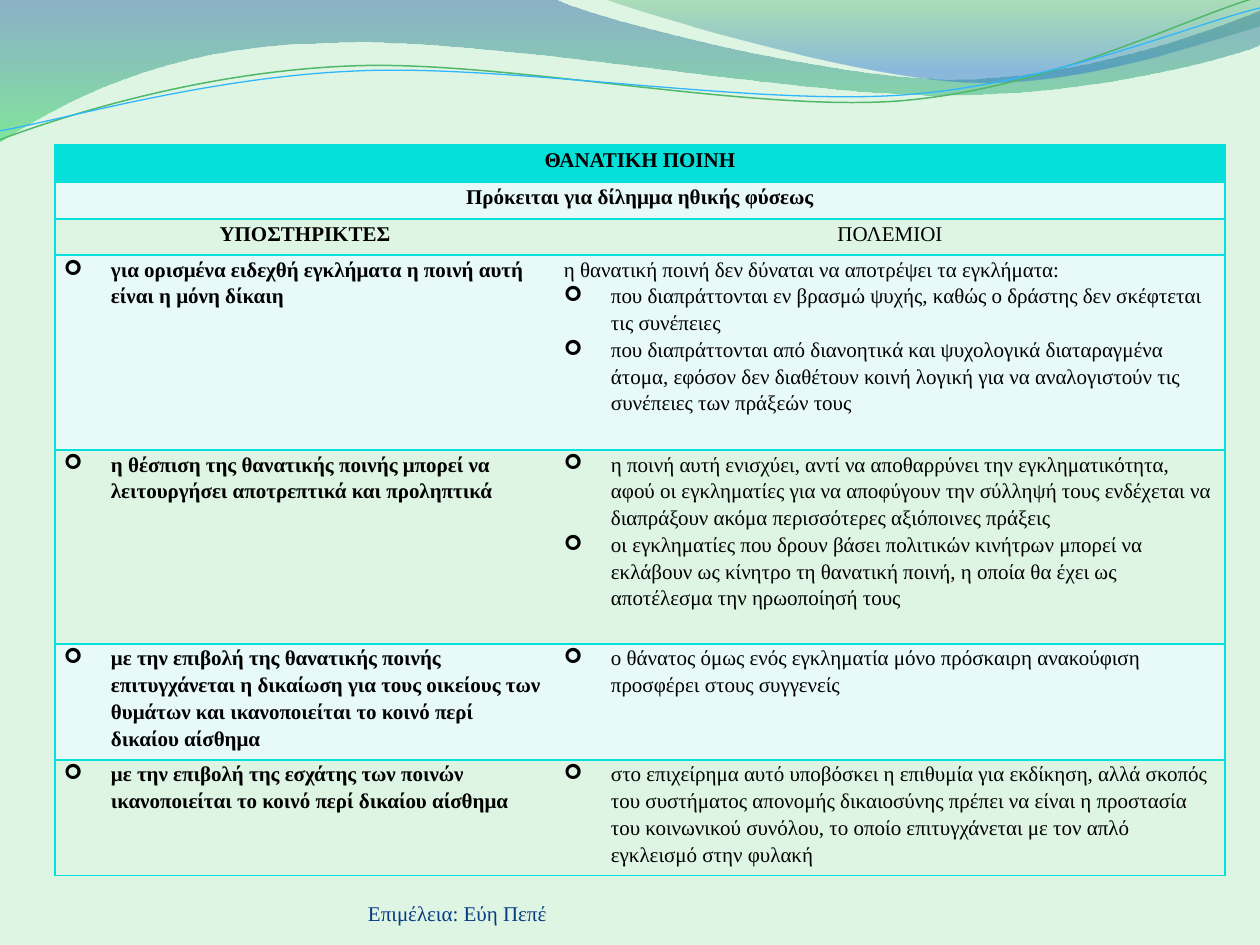
from dataclasses import dataclass

from lxml import etree
from pptx import Presentation
from pptx.dml.color import RGBColor
from pptx.enum.text import MSO_ANCHOR, PP_ALIGN
from pptx.oxml.ns import qn
from pptx.util import Emu, Pt

BOTTOM = MSO_ANCHOR.BOTTOM
CENTER = PP_ALIGN.CENTER
EMU_PER_PX = 914400 / 126


@dataclass(frozen=True)
class Theme:
    """Colours, fonts and sizes of the slide."""
    page: str = "DEF5E4"
    accent: str = "05E0DB"
    band: str = "E7F9F8"
    ink: str = "000000"
    credit: str = "073B81"
    green_line: str = "50B86A"
    blue_line: str = "31B6FD"
    wide_wave: tuple = ((0, "2960A7", 45), (100, "35DA5E", 55))
    right_wave: tuple = ((0, "36A752", 30), (80, "2472D3", 45))
    font: str = "Times New Roman"
    bullet_font: str = "Wingdings"
    size: int = 12
    leading: float = 1.15


THEME = Theme()

WIDE_WAVE = [
    [(0, 0)], [(554, -1)],
    [(600, 21), (837, 79), (955, 79)], [(1074, 79), (1207, 33), (1260, 11)],
    [(1261, 45)],
    [(1239, 55), (1096, 96), (940, 95)], [(784, 95), (481, 35), (324, 43)],
    [(163, 45), (58, 105), (-1, 142)],
]
RIGHT_WAVE = [
    [(604, -1)],
    [(642, 14), (859, 78), (969, 82)], [(1079, 87), (1211, 40), (1260, 26)],
    [(1260, 0)],
]
GREEN_LINE = [
    [(-1, 140)],
    [(60, 117), (199, 72), (349, 66)], [(498, 59), (747, 112), (898, 101)],
    [(1050, 89), (1182, 19), (1258, -3)],
]
BLUE_LINE = [
    [(-1, 131)],
    [(59, 121), (207, 77), (357, 71)], [(508, 64), (752, 106), (903, 95)],
    [(1053, 84), (1186, 26), (1260, 8)],
]

HEADINGS = [["ΘΑΝΑΤΙΚΗ ΠΟΙΝΗ"], ["Πρόκειται για δίλημμα ηθικής φύσεως"], ["ΥΠΟΣΤΗΡΙΚΤΕΣ", "ΠΟΛΕΜΙΟΙ"]]
INTRO = "η θανατική ποινή δεν δύναται να αποτρέψει τα εγκλήματα:"
ARGUMENTS = [
    (["για ορισμένα ειδεχθή εγκλήματα η ποινή αυτή είναι η μόνη δίκαιη"],
     [INTRO,
      "που διαπράττονται εν βρασμώ ψυχής, καθώς ο δράστης δεν σκέφτεται τις συνέπειες",
      "που διαπράττονται από διανοητικά και ψυχολογικά διαταραγμένα άτομα, εφόσον δεν "
      "διαθέτουν κοινή λογική για να αναλογιστούν τις συνέπειες των πράξεών τους"]),
    (["η θέσπιση της θανατικής ποινής μπορεί να λειτουργήσει αποτρεπτικά και προληπτικά"],
     ["η ποινή αυτή ενισχύει, αντί να αποθαρρύνει την εγκληματικότητα, αφού οι εγκληματίες "
      "για να αποφύγουν την σύλληψή τους ενδέχεται να διαπράξουν ακόμα περισσότερες "
      "αξιόποινες πράξεις",
      "οι εγκληματίες που δρουν βάσει πολιτικών κινήτρων μπορεί να εκλάβουν ως κίνητρο τη "
      "θανατική ποινή, η οποία θα έχει ως αποτέλεσμα την ηρωοποίησή τους"]),
    (["με την επιβολή της θανατικής ποινής επιτυγχάνεται η δικαίωση για τους οικείους των "
      "θυμάτων και ικανοποιείται το κοινό περί δικαίου αίσθημα"],
     ["ο θάνατος όμως ενός εγκληματία μόνο πρόσκαιρη ανακούφιση προσφέρει στους συγγενείς"]),
    (["με την επιβολή της εσχάτης των ποινών ικανοποιείται το κοινό περί δικαίου αίσθημα"],
     ["στο επιχείρημα αυτό υποβόσκει η επιθυμία για εκδίκηση, αλλά σκοπός του συστήματος "
      "απονομής δικαιοσύνης πρέπει να είναι η προστασία του κοινωνικού συνόλου, το οποίο "
      "επιτυγχάνεται με τον απλό εγκλεισμό στην φυλακή"]),
]


def px(length):
    """Turn px into EMU."""
    return Emu(round(length * EMU_PER_PX))


def add_element(parent, tag, **attributes):
    """Append a DrawingML element."""
    return etree.SubElement(parent, qn(tag), {name: str(value) for name, value in attributes.items()})


def add_span(para, text, color, bold=False):
    """Add one styled run to a paragraph."""
    span = para.add_run()
    span.text = text
    span.font.name, span.font.size, span.font.bold = THEME.font, Pt(THEME.size), bold
    span.font.color.rgb = RGBColor.from_string(color)


def add_outline(page, box, segments, close):
    """Draw straight and cubic segments relative to the corner of a box."""
    points = [(px(box[0] + x), px(box[1] + y)) for segment in segments for x, y in segment]
    builder = page.shapes.build_freeform(*points[0])
    builder.add_line_segments(points[1:], close=close)
    shape = builder.convert_to_shape()
    shape.shadow.inherit = False
    steps = iter(list(shape.element.iter(qn("a:lnTo"))))
    for segment in segments[1:]:
        group = [next(steps) for _ in segment]
        if len(group) == 3:
            curve = etree.Element(qn("a:cubicBezTo"))
            group[0].addprevious(curve)
            for step in group:
                curve.append(step[0])
                step.getparent().remove(step)
    return shape


def add_wave(page, box, segments, stops):
    """Draw a translucent wave with a top-down gradient."""
    shape = add_outline(page, box, segments, True)
    shape.line.fill.background()
    gradient = etree.Element(qn("a:gradFill"), rotWithShape="1")
    stop_list = add_element(gradient, "a:gsLst")
    for position, color, opacity in stops:
        stop = add_element(stop_list, "a:gs", pos=position * 1000)
        add_element(add_element(stop, "a:srgbClr", val=color), "a:alpha", val=opacity * 1000)
    add_element(gradient, "a:lin", ang=5400000, scaled=0)
    shape.element.spPr.find(qn("a:custGeom")).addnext(gradient)


def add_header(page, box):
    """Draw the waves and the two lines over them."""
    add_wave(page, box, WIDE_WAVE, THEME.wide_wave)
    add_wave(page, box, RIGHT_WAVE, THEME.right_wave)
    for segments, color, width in ((GREEN_LINE, THEME.green_line, 0.85), (BLUE_LINE, THEME.blue_line, 0.75)):
        shape = add_outline(page, box, segments, False)
        shape.fill.background()
        shape.line.color.rgb = RGBColor.from_string(color)
        shape.line.width = Pt(width)


def style_cell(cell, fill, sides):
    """Set the borders, fill and margins of a cell."""
    properties = cell._tc.get_or_add_tcPr()
    for side in "LRTB":
        line = add_element(properties, f"a:ln{side}", w=Pt(1))
        if side in sides:
            add_element(add_element(line, "a:solidFill"), "a:srgbClr", val=THEME.accent)
        else:
            add_element(line, "a:noFill")
    cell.fill.solid()
    cell.fill.fore_color.rgb = RGBColor.from_string(fill)
    cell.margin_left = cell.margin_right = px(9)
    cell.margin_top = cell.margin_bottom = 0


def fill_cell(cell, texts, heading, bold):
    """Write a heading or a bulleted list into a cell."""
    frame = cell.text_frame
    for index, text in enumerate(texts):
        para = frame.add_paragraph() if index else frame.paragraphs[0]
        para.line_spacing = THEME.leading
        if heading:
            para.alignment = CENTER
        elif text != INTRO:
            properties = para._p.get_or_add_pPr()
            properties.set("marL", str(px(47)))
            properties.set("indent", str(-px(47)))
            add_element(properties, "a:buFont", typeface=THEME.bullet_font)
            add_element(properties, "a:buChar", char="➢")
        add_span(para, text, THEME.ink, bold)


def add_debate(page, box, columns, rows):
    """Place the table of arguments for and against."""
    table = page.shapes.add_table(len(rows), len(columns), *map(px, box)).table
    table.first_row = table.horz_banding = False
    for column, width in zip(table.columns, columns):
        column.width = px(width)
    contents = [[[text] for text in row] for row in HEADINGS] + ARGUMENTS
    for number, (height, content) in enumerate(zip(rows, contents)):
        table.rows[number].height = px(height)
        merged = len(content) == 1
        fill = THEME.accent if number == 0 else THEME.band if number % 2 else THEME.page
        for side in (0, 1):
            style_cell(table.cell(number, side), fill, "LRTB" if merged else ("LTB", "RTB")[side])
        if merged:
            table.cell(number, 0).merge(table.cell(number, 1))
        for side, texts in enumerate(content):
            fill_cell(table.cell(number, side), texts, number < len(HEADINGS), side == 0)


def add_credit(page, box):
    """Place the editor's line below the table."""
    frame = page.shapes.add_textbox(*map(px, box)).text_frame
    frame.word_wrap = True
    frame.vertical_anchor = BOTTOM
    frame.margin_left = frame.margin_right = frame.margin_top = frame.margin_bottom = 0
    add_span(frame.paragraphs[0], "Επιμέλεια: Εύη Πεπέ", THEME.credit)


def main():
    """Build the deck and save it."""
    deck = Presentation()
    deck.slide_width, deck.slide_height = px(1260), px(945)
    page = deck.slides.add_slide(deck.slide_layouts[6])
    page.background.fill.solid()
    page.background.fill.fore_color.rgb = RGBColor.from_string(THEME.page)
    add_header(page, (0, 0))
    add_credit(page, (368, 876, 462, 50))
    add_debate(page, (55, 145, 1170, 731), (500, 670), (37, 37, 36, 195, 194, 116, 116))
    deck.save("out.pptx")


if __name__ == "__main__":
    main()
